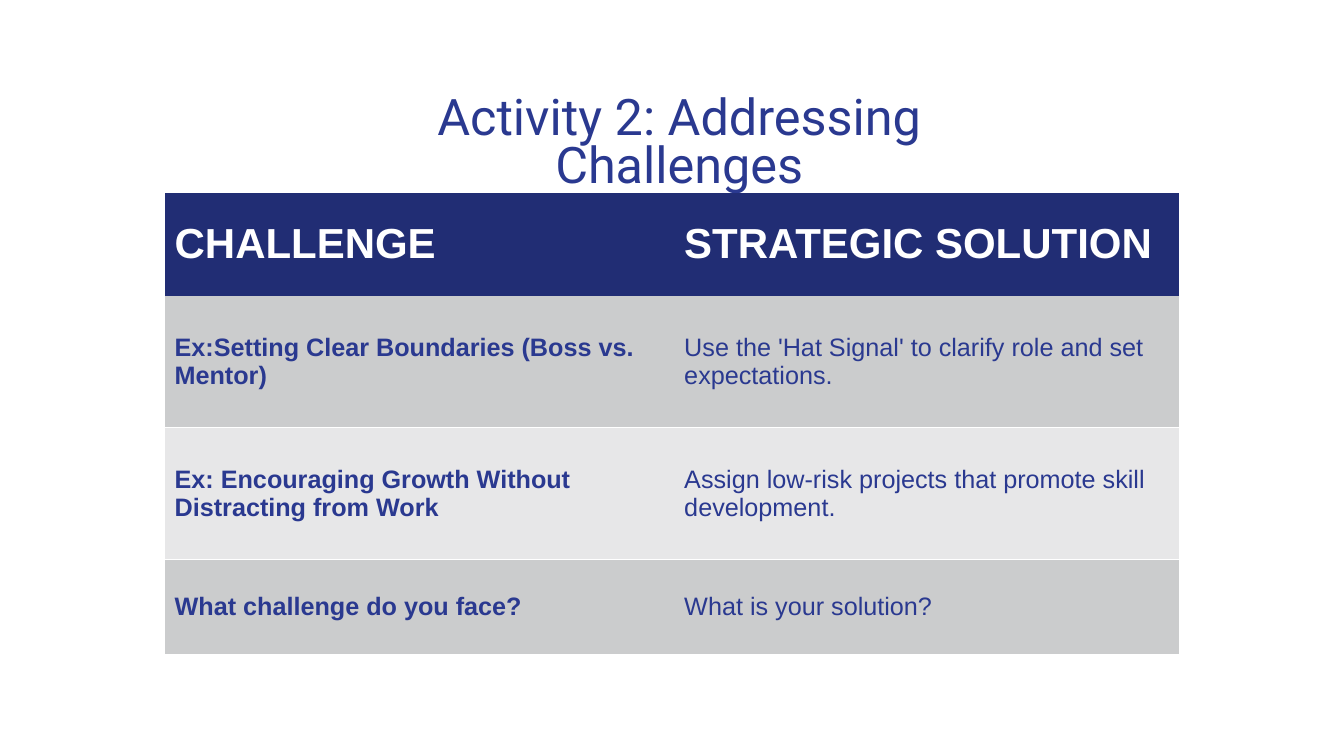
from lxml import etree
from pptx import Presentation
from pptx.dml.color import RGBColor
from pptx.enum.text import MSO_ANCHOR, PP_ALIGN
from pptx.oxml.ns import qn
from pptx.util import Pt

CENTER = PP_ALIGN.CENTER
BOTTOM = MSO_ANCHOR.BOTTOM
MIDDLE = MSO_ANCHOR.MIDDLE

BLUE, NAVY, WHITE = "2A3990", "212D74", "FFFFFF"
BANDS = ["CBCCCD", "E7E7E8"]
ROWS = [
    ("CHALLENGE", "STRATEGIC SOLUTION"),
    ("Ex:Setting Clear Boundaries (Boss vs. Mentor)",
     "Use the 'Hat Signal' to clarify role and set expectations."),
    ("Ex: Encouraging Growth Without Distracting from Work",
     "Assign low-risk projects that promote skill development."),
    ("What challenge do you face?", "What is your solution?"),
]
HEIGHTS = [73.5, 94.3, 94.3, 67.7]
WIDTHS = [364, 360]


def paint(target, color):
    """Give a fill or a font a hex colour."""
    if hasattr(target, "solid"):
        target.solid()
        target.fore_color.rgb = RGBColor.from_string(color)
    else:
        target.color.rgb = RGBColor.from_string(color)


def style(para, face, size, color, bold=False):
    for run in para.runs:
        run.font.name = face
        run.font.size = Pt(size)
        run.font.bold = bold
        paint(run.font, color)


def edge(cell, rules):
    """Draw white lines on the named sides, none on the others."""
    props = cell._tc.get_or_add_tcPr()
    for spot, side in enumerate("LRTB"):
        line = etree.Element(qn(f"a:ln{side}"), w=str(Pt(0.75)))
        if side in rules:
            fill = etree.SubElement(line, qn("a:solidFill"))
            etree.SubElement(fill, qn("a:srgbClr"), val=WHITE)
        else:
            etree.SubElement(line, qn("a:noFill"))
        props.insert(spot, line)


def add_title(slide, left, top, width, height):
    box = slide.shapes.add_textbox(Pt(left), Pt(top), Pt(width), Pt(height))
    frame = box.text_frame
    frame.word_wrap = True
    frame.vertical_anchor = BOTTOM
    frame.text = "Activity 2: Addressing Challenges"
    para = frame.paragraphs[0]
    para.alignment = CENTER
    para.line_spacing = 0.8
    style(para, "Roboto", 36, BLUE)


def add_grid(slide, left, top, width, height):
    table = slide.shapes.add_table(
        len(ROWS), len(WIDTHS), Pt(left), Pt(top), Pt(width), Pt(height)).table
    for col, span in zip(table.columns, WIDTHS):
        col.width = Pt(span)
    for row, span in zip(table.rows, HEIGHTS):
        row.height = Pt(span)

    for r, texts in enumerate(ROWS):
        head = r == 0
        # White rules run only between the body rows
        rules = ("T" if r > 1 else "") + ("B" if 0 < r < len(ROWS) - 1 else "")
        for c, text in enumerate(texts):
            cell = table.cell(r, c)
            cell.text_frame.text = text
            cell.vertical_anchor = MIDDLE
            cell.margin_left = cell.margin_right = Pt(6.75)
            cell.margin_top = cell.margin_bottom = Pt(6.75)
            paint(cell.fill, NAVY if head else BANDS[(r - 1) % 2])
            edge(cell, rules)
            style(cell.text_frame.paragraphs[0], "Arial", 30 if head else 18,
                  WHITE if head else BLUE, head or c == 0)


def main():
    deck = Presentation()
    deck.slide_width, deck.slide_height = Pt(960), Pt(540)
    slide = deck.slides.add_slide(deck.slide_layouts[6])
    # Heading
    add_title(slide, 224.6, 28.8, 521.3, 113)
    # Challenges and solutions
    add_grid(slide, 118, 137.7, sum(WIDTHS), sum(HEIGHTS))
    deck.save("out.pptx")


if __name__ == "__main__":
    main()
